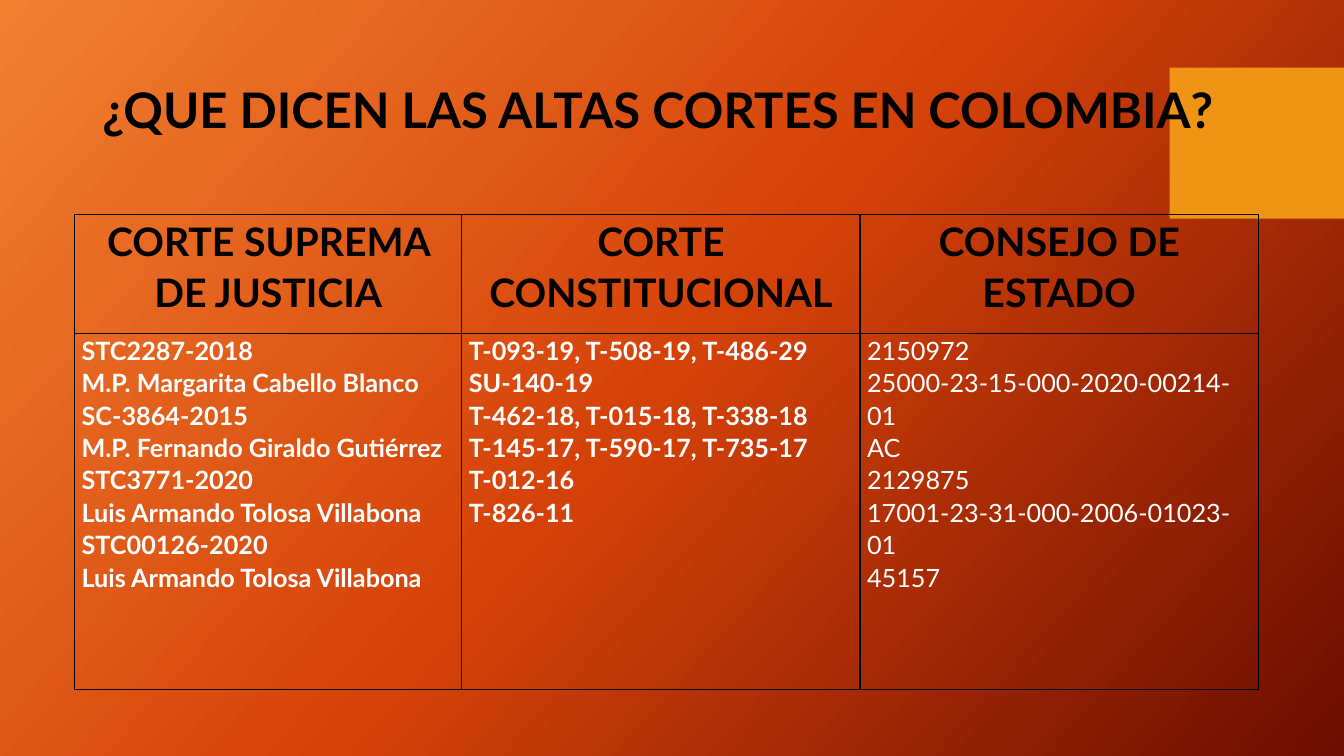
from copy import deepcopy

from lxml.etree import SubElement
from pptx import Presentation
from pptx.dml.color import RGBColor
from pptx.enum.shapes import MSO_SHAPE
from pptx.enum.text import MSO_ANCHOR, PP_ALIGN
from pptx.oxml.ns import qn
from pptx.util import Inches, Pt

WIDTH, HEIGHT = 13.33, 7.5
BLACK, WHITE, AMBER = "000000", "FFFFFF", "F09415"
SUNSET = [(0, "F18031"), (0.5, "D54209"), (1, "6A0D00")]

COURTS = ["CORTE SUPREMA DE JUSTICIA", "CORTE CONSTITUCIONAL", "CONSEJO DE ESTADO"]
RULINGS = [
    """STC2287-2018
M.P. Margarita Cabello Blanco
SC-3864-2015
M.P. Fernando Giraldo Gutiérrez
STC3771-2020
Luis Armando Tolosa Villabona
STC00126-2020
Luis Armando Tolosa Villabona""",
    """T-093-19, T-508-19, T-486-29
SU-140-19
T-462-18, T-015-18, T-338-18
T-145-17, T-590-17, T-735-17
T-012-16
T-826-11""",
    "2150972\v25000-23-15-000-2020-00214-01\vAC\n"
    "2129875\v17001-23-31-000-2006-01023-01\v45157",
]


def color(value):
    return RGBColor.from_string(value)


def apply(target, values):
    for name, value in values.items():
        setattr(target, name, value)


class CourtSlide:
    font = "Lato"

    def __init__(self, deck):
        self.page = deck.slides.add_slide(deck.slide_layouts[5])

    def area(self, left, top, width, height):
        return [Inches(round(share * size, 2)) for share, size in
                zip((left, top, width, height), (WIDTH, HEIGHT) * 2)]

    def background(self, stops, angle):
        fill = self.page.background.fill
        fill.gradient()
        fill.gradient_angle = 360 - angle
        stop_list = self.page.element.find(".//" + qn("a:gsLst"))
        stop_list.append(deepcopy(stop_list[-1]))
        for stop, (position, value) in zip(fill.gradient_stops, stops):
            stop.position = position
            stop.color.rgb = color(value)

    def block(self, area, value):
        box = self.page.shapes.add_shape(MSO_SHAPE.RECTANGLE, *self.area(*area))
        box.shadow.inherit = False
        box.fill.solid()
        box.fill.fore_color.rgb = color(value)
        box.line.fill.background()
        tree = self.page.shapes.element
        tree.remove(box.element)
        tree.insert(2, box.element)

    def text(self, frame, wording, size, value, bold, align, spacing=1.0):
        frame.text = wording
        for para in frame.paragraphs:
            apply(para, {"alignment": align, "line_spacing": spacing})
            for span in para.runs:
                apply(span.font, {"name": self.font, "size": Pt(size), "bold": bold})
                span.font.color.rgb = color(value)

    def title(self, area, wording):
        box = self.page.shapes.title
        apply(box, dict(zip(("left", "top", "width", "height"), self.area(*area))))
        apply(box.text_frame, {"word_wrap": True, "vertical_anchor": MSO_ANCHOR.MIDDLE})
        self.text(box.text_frame, wording, 35, BLACK, True, PP_ALIGN.CENTER)

    def border(self, cell):
        properties = cell._tc.get_or_add_tcPr()
        for side in ("lnL", "lnR", "lnT", "lnB"):
            line = SubElement(properties, qn(f"a:{side}"), w=str(Pt(1)))
            fill = SubElement(line, qn("a:solidFill"))
            SubElement(fill, qn("a:srgbClr"), val=BLACK)

    def table(self, area, column_widths, row_heights, rows, styles):
        table = self.page.shapes.add_table(
            len(rows), len(column_widths), *self.area(*area)).table
        apply(table, {"first_row": False, "horz_banding": False})
        for column, width in zip(table.columns, column_widths):
            column.width = Inches(width)
        margin = Inches(0.07)
        for row, height, wordings, style in zip(table.rows, row_heights, rows, styles):
            row.height = Inches(height)
            size, value, bolds, align = style
            for cell, wording, bold in zip(row.cells, wordings, bolds):
                apply(cell, {"margin_left": margin, "margin_right": margin,
                             "margin_top": 0, "margin_bottom": 0})
                self.border(cell)
                cell.fill.background()
                self.text(cell.text_frame, wording, size, value, bold, align, 1.07)


def main():
    deck = Presentation()
    apply(deck, {"slide_width": Inches(WIDTH), "slide_height": Inches(HEIGHT)})
    slide = CourtSlide(deck)
    slide.background(SUNSET, 42)
    slide.block((0.87, 0.09, 0.13, 0.2), AMBER)
    slide.title((0.04, 0.1, 0.9, 0.09), "¿QUE DICEN LAS ALTAS CORTES EN COLOMBIA?")
    slide.table(
        (0.0555, 0.284, 0.88, 0.63), (3.84, 3.95, 3.95), (1.18, 3.53),
        (COURTS, RULINGS),
        ((28, BLACK, (True, True, True), PP_ALIGN.CENTER),
         (18, WHITE, (True, True, False), PP_ALIGN.LEFT)))
    deck.save("out.pptx")


if __name__ == "__main__":
    main()
